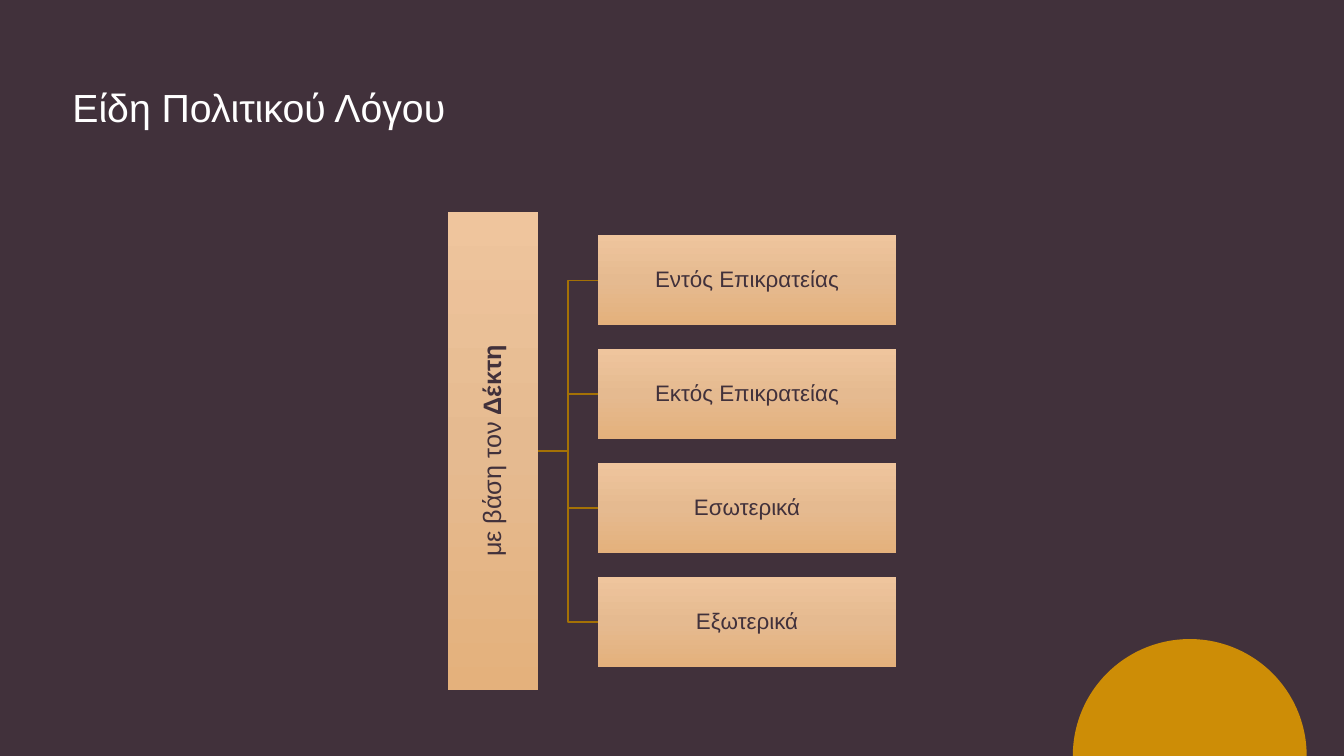
from copy import deepcopy
from math import cos, pi, sin

from pptx import Presentation
from pptx.dml.color import RGBColor
from pptx.enum.shapes import MSO_SHAPE as Shape
from pptx.enum.text import MSO_ANCHOR as Anchor, PP_ALIGN as Align
from pptx.util import Inches, Pt

# Content
TITLE = "Είδη Πολιτικού Λόγου"
ROOT = [("με βάση τον ", False), ("Δέκτη", True)]
KINDS = ["Εντός Επικρατείας", "Εκτός Επικρατείας", "Εσωτερικά", "Εξωτερικά"]

# Colours
PLUM = RGBColor(0x41, 0x31, 0x3B)
WHITE = RGBColor(0xFF, 0xFF, 0xFF)
GOLD = RGBColor(0xCD, 0x8D, 0x06)
BRANCH = RGBColor(0xA4, 0x71, 0x05)
PEACH = [(0, RGBColor(0xEF, 0xC5, 0x9D)),
         (0.5, RGBColor(0xE5, 0xBA, 0x90)),
         (1, RGBColor(0xE4, 0xB1, 0x7C))]

# Layout in inches
ROOT_LEFT, ROOT_TOP, ROOT_HEIGHT = 4.44, 2.1, 4.75
BOX_LEFT, BOX_TOP, BOX_WIDTH, BOX_HEIGHT = 5.93, 2.33, 2.96, 0.9
BOX_STEP = 1.13
SUN_X, SUN_Y, SUN_RADIUS, SUN_STEPS = 11.8, 7.5, 1.16, 90

prs = Presentation()
prs.slide_width, prs.slide_height = Inches(13.33), Inches(7.5)
slide = prs.slides.add_slide(prs.slide_layouts[6])
slide.background.fill.solid()
slide.background.fill.fore_color.rgb = PLUM


def write(frame, runs, size, color, align=Align.CENTER, spacing=0.9, inset=0.01):
    frame.word_wrap = True
    if inset is not None:
        frame.margin_left = frame.margin_right = Inches(inset)
        frame.margin_top = frame.margin_bottom = Inches(inset)
    paragraph = frame.paragraphs[0]
    paragraph.alignment, paragraph.line_spacing = align, spacing
    for text, bold in runs:
        run = paragraph.add_run()
        run.text = text
        run.font.name, run.font.size = "Arial", Pt(size)
        run.font.bold, run.font.color.rgb = bold, color


def outline(points, close):
    corners = [(Inches(x), Inches(y)) for x, y in points]
    builder = slide.shapes.build_freeform(*corners[0])
    builder.add_line_segments(corners[1:], close=close)
    shape = builder.convert_to_shape()
    shape.shadow.inherit = False
    return shape


def peach_box(left, top, width, height):
    box = slide.shapes.add_shape(Shape.RECTANGLE, *map(Inches, (left, top, width, height)))
    box.shadow.inherit = False
    box.line.fill.background()
    box.fill.gradient()
    box.fill.gradient_angle = 270
    # The default gradient has two stops; add a middle one
    first_stop = box._element.spPr.find(".//{*}gs")
    first_stop.addnext(deepcopy(first_stop))
    for stop, (position, color) in zip(box.fill.gradient_stops, PEACH):
        stop.position, stop.color.rgb = position, color
    box.text_frame.vertical_anchor = Anchor.MIDDLE
    return box


# Half sun at the bottom edge
angles = [pi * step / SUN_STEPS for step in range(SUN_STEPS + 1)]
sun = outline([(SUN_X - SUN_RADIUS * cos(a), SUN_Y - SUN_RADIUS * sin(a)) for a in angles], True)
sun.fill.solid()
sun.fill.fore_color.rgb = GOLD
sun.line.fill.background()

# Branches from the root to each kind
root_right = ROOT_LEFT + BOX_HEIGHT
root_middle = ROOT_TOP + ROOT_HEIGHT / 2
fork = (root_right + BOX_LEFT) / 2
box_tops = [BOX_TOP + BOX_STEP * row for row in range(len(KINDS))]
for top in box_tops:
    middle = top + BOX_HEIGHT / 2
    branch = outline([(root_right, root_middle), (fork, root_middle),
                      (fork, middle), (BOX_LEFT, middle)], False)
    branch.fill.background()
    branch.line.color.rgb, branch.line.width = BRANCH, Pt(1)

# Root, with its text reading upwards
root = peach_box(ROOT_LEFT, ROOT_TOP, BOX_HEIGHT, ROOT_HEIGHT)
write(root.text_frame, ROOT, 18, PLUM)
root.text_frame._txBody.bodyPr.set("vert", "vert270")

# Kinds
for kind, top in zip(KINDS, box_tops):
    box = peach_box(BOX_LEFT, top, BOX_WIDTH, BOX_HEIGHT)
    write(box.text_frame, [(kind, False)], 16, PLUM)

# Title
title = slide.shapes.add_textbox(*map(Inches, (0.62, 0.66, 12.09, 0.64)))
write(title.text_frame, [(TITLE, False)], 28, WHITE,
      align=Align.LEFT, spacing=Pt(42), inset=None)

prs.save("out.pptx")
